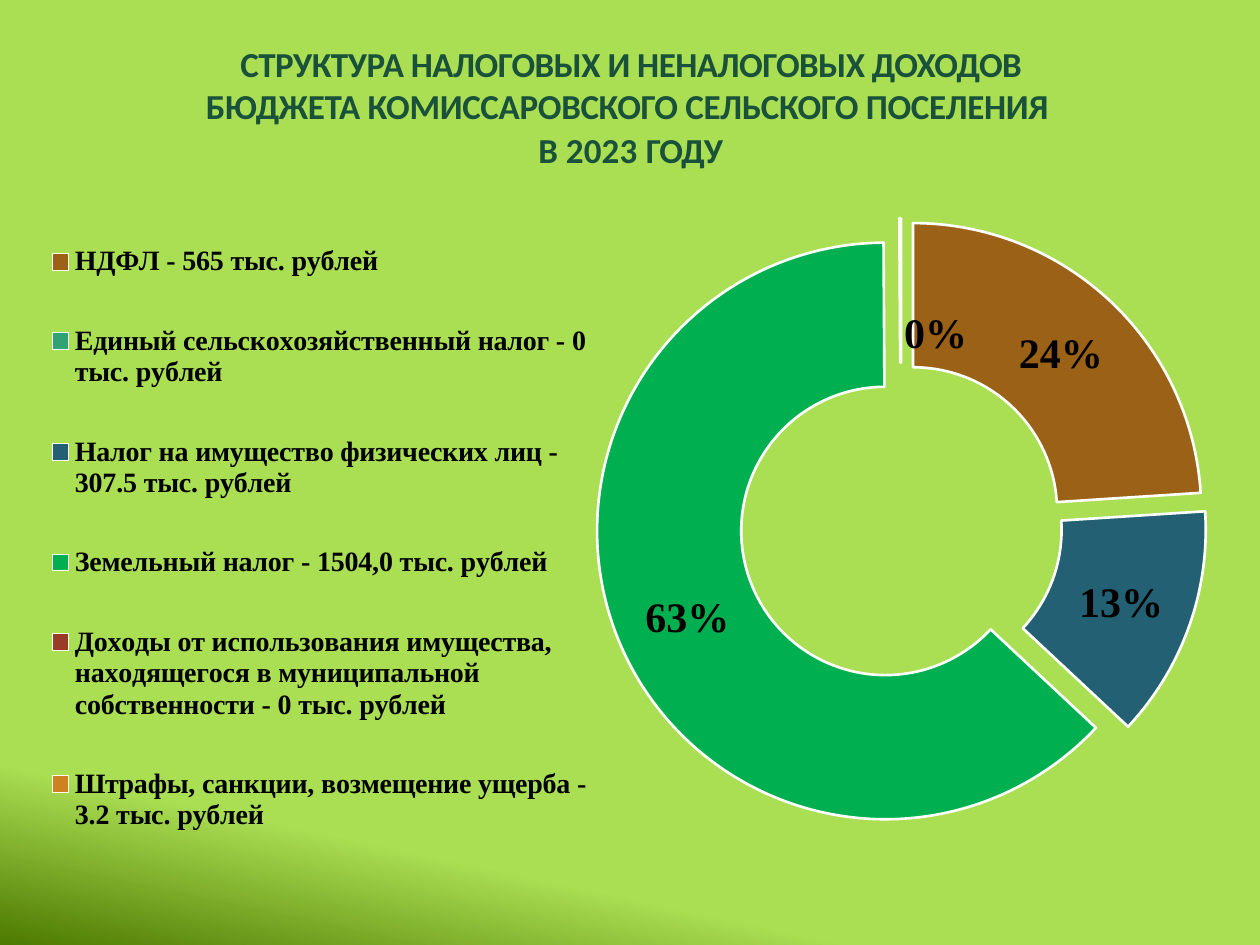
from lxml.etree import SubElement
from pptx import Presentation
from pptx.chart.data import CategoryChartData
from pptx.dml.color import RGBColor
from pptx.enum.chart import XL_CHART_TYPE, XL_LEGEND_POSITION
from pptx.enum.shapes import MSO_SHAPE
from pptx.enum.text import MSO_ANCHOR, MSO_AUTO_SIZE, PP_ALIGN
from pptx.oxml import parse_xml
from pptx.oxml.ns import nsdecls, qn
from pptx.util import Inches, Pt

LIME = RGBColor(0xAC, 0xDF, 0x55)
OLIVE = RGBColor(0x4C, 0x78, 0x00)
VEIL_GREEN = RGBColor(0x84, 0xC8, 0x23)
TITLE_GREEN = RGBColor(0x19, 0x51, 0x3A)
WHITE = RGBColor(0xFF, 0xFF, 0xFF)
BLACK = RGBColor(0, 0, 0)
BROWN = RGBColor(0x9A, 0x61, 0x17)
TEAL = RGBColor(0x31, 0xA2, 0x74)
BLUE = RGBColor(0x23, 0x60, 0x73)
GREEN = RGBColor(0x00, 0xB0, 0x50)
RED = RGBColor(0x98, 0x3C, 0x27)
ORANGE = RGBColor(0xCD, 0x81, 0x1F)

TITLE_LINES = [
    [("СТРУКТУРА НАЛОГОВЫХ И НЕНАЛОГОВЫХ ДОХОДОВ ", -0.3),
     ("БЮДЖЕТА КОМИССАРОВСКОГО СЕЛЬСКОГО ПОСЕЛЕНИЯ ", -0.2)],
    [("В ", 0), ("2023 ", 0.1), ("ГОДУ", -0.4)],
]
INCOME = [
    ("НДФЛ - 565 тыс. рублей", 24, BROWN),
    ("Единый сельскохозяйственный налог - 0 тыс. рублей", 0, TEAL),
    ("Налог на имущество физических лиц - 307.5 тыс. рублей", 13, BLUE),
    ("Земельный налог - 1504,0 тыс. рублей", 63, GREEN),
    ("Доходы от использования имущества, находящегося в муниципальной "
     "собственности - 0 тыс. рублей", 0, RED),
    ("Штрафы, санкции, возмещение ущерба - 3.2 тыс. рублей", 0.1, ORANGE),
]


def format_font(font, name="Times New Roman", size=16, color=BLACK, bold=True):
    """Set the face, size, colour and weight of a font."""
    font.name = name
    font.size = Pt(size)
    font.bold = bold
    font.color.rgb = color


def add_text(paragraph, text, spacing=0, **font_format):
    """Add a run with letter spacing in points and a font format."""
    run = paragraph.add_run()
    run.text = text
    format_font(run.font, **font_format)
    run.font._element.set("spc", str(round(spacing * 100)))


def manual_layout(target=None, **measures):
    """Return a chart layout element with the given fractions."""
    layout = parse_xml(f"<c:layout {nsdecls('c')}><c:manualLayout/></c:layout>")
    settings = {}
    if target:
        settings = {"layoutTarget": target, "xMode": "edge", "yMode": "edge"}
    settings.update(measures)
    for tag, value in settings.items():
        SubElement(layout[0], qn(f"c:{tag}")).set("val", str(value))
    return layout


def set_background(slide):
    """Fill the slide with a gradient that darkens in one corner."""
    fill = slide.background.fill
    fill.gradient()
    fill.gradient_angle = 258
    for stop, position, color in zip(fill.gradient_stops, (0.85, 1), (LIME, OLIVE)):
        stop.position = position
        stop.color.rgb = color


def add_veil(slide, left, top, width, height):
    """Lay a nearly clear rectangle behind everything else."""
    veil = slide.shapes.add_shape(MSO_SHAPE.RECTANGLE, left, top, width, height)
    veil.shadow.inherit = False
    veil.fill.solid()
    veil.fill.fore_color.rgb = VEIL_GREEN
    veil.line.fill.background()
    color = veil._element.spPr.find(f".//{qn('a:srgbClr')}")
    SubElement(color, qn("a:alpha")).set("val", "3000")
    slide.shapes._spTree.insert(2, veil._element)


def place_title(slide, left, top, width, height):
    """Write the heading in the title placeholder."""
    title = slide.shapes.title
    title.left, title.top, title.width, title.height = left, top, width, height
    frame = title.text_frame
    frame.word_wrap = True
    frame.auto_size = MSO_AUTO_SIZE.SHAPE_TO_FIT_TEXT
    frame.vertical_anchor = MSO_ANCHOR.TOP
    frame.margin_left = frame.margin_right = frame.margin_bottom = 0
    frame.margin_top = Inches(0.01)
    for index, line in enumerate(TITLE_LINES):
        paragraph = frame.add_paragraph() if index else frame.paragraphs[0]
        paragraph.alignment = PP_ALIGN.CENTER
        paragraph.space_before = Pt(1 if index else 0)
        for text, spacing in line:
            add_text(paragraph, text, spacing, name="Calibri", size=20, color=TITLE_GREEN)


def label_slices(series):
    """Show percentages, without the empty slices and beside the thin one."""
    labels = series.data_labels
    labels.show_percentage = True
    labels.show_value = False
    labels.number_format = "0%"
    labels.number_format_is_linked = False
    format_font(labels.font, size=24)
    for index, (_, value, _) in enumerate(INCOME):
        if value >= 1:
            continue
        format_font(series.points[index].data_label.font, size=24)
        label = labels._element.xpath(f"c:dLbl[c:idx/@val='{index}']")[0]
        if value:
            label.insert(1, manual_layout(x=0.03, y=0.06))
            label.find(qn("c:showVal")).set("val", "0")
            label.find(qn("c:showPercent")).set("val", "1")
        else:
            for child in label[1:]:
                label.remove(child)
            SubElement(label, qn("c:delete")).set("val", "1")


def add_income_chart(slide, left, top, width, height):
    """Add the doughnut of income shares with its legend on the left."""
    data = CategoryChartData()
    data.categories = [name for name, _, _ in INCOME]
    data.add_series("Series 1", [value for _, value, _ in INCOME])
    chart = slide.shapes.add_chart(
        XL_CHART_TYPE.DOUGHNUT, left, top, width, height, data).chart
    format_font(chart.font, name="Quicksand", size=10, color=WHITE, bold=False)
    chart.has_title = False

    plot = chart.plots[0]
    plot.vary_by_categories = True
    plot._element.find(qn("c:holeSize")).set("val", "61")
    series = plot.series[0]
    for index, (_, _, color) in enumerate(INCOME):
        slice_format = series.points[index].format
        slice_format.fill.solid()
        slice_format.fill.fore_color.rgb = color
        slice_format.line.color.rgb = WHITE
        slice_format.line.width = Pt(1.5)
    explosion = parse_xml(f'<c:explosion {nsdecls("c")} val="12"/>')
    series._element.find(qn("c:dPt")).addprevious(explosion)
    label_slices(series)

    chart.has_legend = True
    legend = chart.legend
    legend.position = XL_LEGEND_POSITION.BOTTOM
    legend.include_in_layout = False
    format_font(legend.font)
    for layout in legend._element.findall(qn("c:layout")):
        legend._element.remove(layout)
    legend_layout = manual_layout(xMode="edge", yMode="edge", x=0.01, y=0.03, w=0.47, h=0.93)
    legend._element.find(qn("c:legendPos")).addnext(legend_layout)

    plot_area = plot._element.getparent()
    for layout in plot_area.findall(qn("c:layout")):
        plot_area.remove(layout)
    plot_area.insert(0, manual_layout("inner", x=0.48, y=0.03, w=0.52, h=0.89))


def main():
    """Build the slide and save it."""
    presentation = Presentation()
    presentation.slide_width, presentation.slide_height = Inches(10), Inches(7.5)
    slide = presentation.slides.add_slide(presentation.slide_layouts[5])
    set_background(slide)
    add_veil(slide, 0, 0, presentation.slide_width, presentation.slide_height)
    place_title(slide, Inches(1.37), Inches(0.33), Inches(7.27), Inches(1.04))
    add_income_chart(slide, Inches(0.25), Inches(1.4), Inches(9.33), Inches(5.81))
    presentation.save("out.pptx")


if __name__ == "__main__":
    main()
